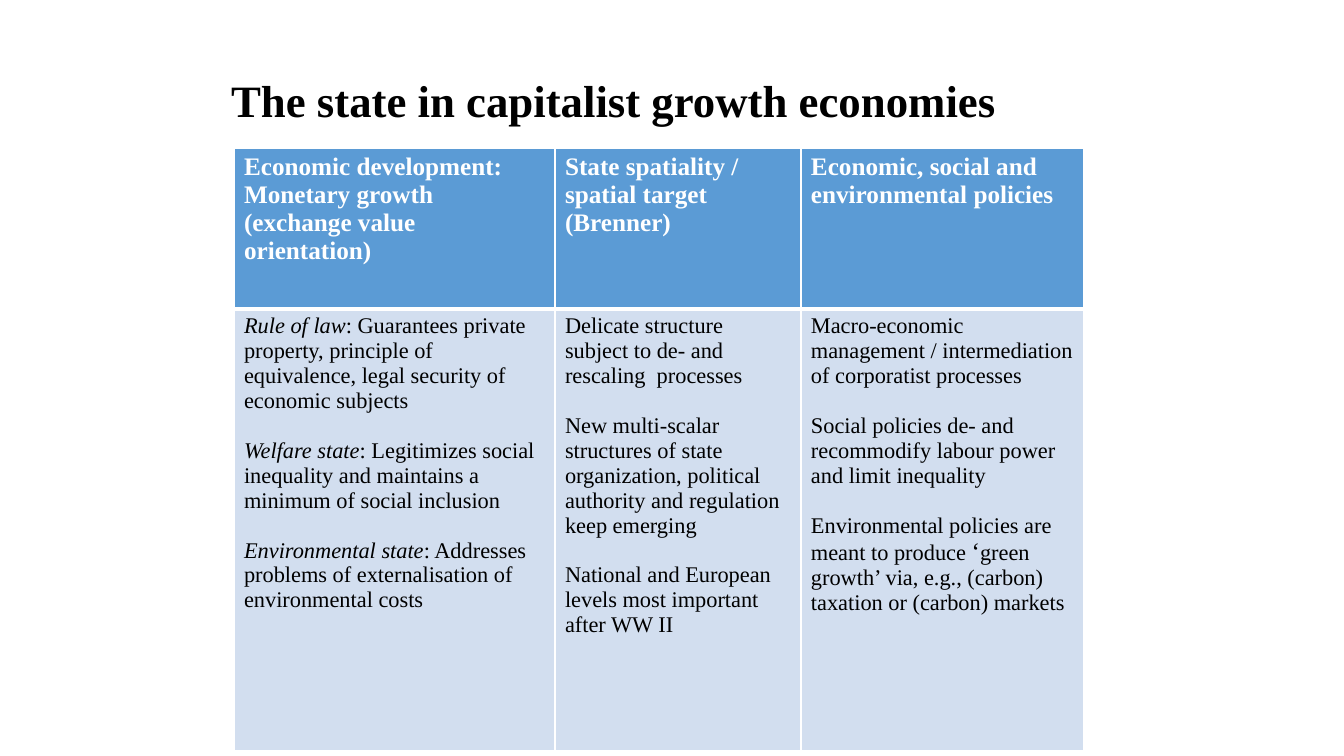
import pptx
import pptx.dml.color
import pptx.enum.text
import pptx.oxml
import pptx.oxml.ns
import pptx.util

PX = 914400 / 100.8
PAGE_SIZE = (1344, 756)
TITLE = "The state in capitalist growth economies"
TITLE_BOX = (221, 30, 1159, 146)
TABLE_AT = (234, 148)
COLUMN_WIDTHS = (321, 246, 283)
ROW_HEIGHTS = (161, 442)
FONT = "Times New Roman"
PARAGRAPH_GAP = 17.8

TITLE_FORMAT = {"size": 32, "bold": True, "italic": False, "color": "000000"}
HEADER_FORMAT = {"size": 18, "bold": True, "italic": False, "color": "FFFFFF"}
BODY_FORMAT = {"size": 16, "bold": False, "italic": False, "color": "000000"}
ITALIC = {"italic": True}
LARGE = {"size": 18}

HEADERS = [
    "Economic development: Monetary growth (exchange value orientation)",
    "State spatiality / spatial target (Brenner)",
    "Economic, social and environmental policies",
]
STATE_ROLES = [
    [("Rule of law", ITALIC),
     (": Guarantees private property, principle of equivalence, "
      "legal security of economic subjects", {})],
    [("Welfare state", ITALIC),
     (": Legitimizes social inequality and maintains a minimum of social inclusion", {})],
    [("Environmental state", ITALIC),
     (": Addresses problems of externalisation of environmental costs", {})],
]
SPATIALITY = [
    [("Delicate structure subject to de- and rescaling  processes", {})],
    [("New multi-scalar structures of state organization, "
      "political authority and regulation keep emerging", {})],
    [("National and European levels most important after WW II", {})],
]
POLICIES = [
    [("Macro-economic management / intermediation of corporatist processes", {})],
    [("Social policies de- and recommodify labour power and limit inequality", {})],
    [("Environmental policies are meant to produce ", {}),
     ("‘", LARGE),
     ("green growth’ via, e.g., (carbon) taxation or (carbon) markets", {})],
]
ROWS = [
    {"cells": [[[(header, {})]] for header in HEADERS], "format": HEADER_FORMAT,
     "fill": "5B9BD5", "borders": {"lnL": 1, "lnR": 1, "lnT": 1, "lnB": 3}},
    {"cells": [STATE_ROLES, SPATIALITY, POLICIES], "format": BODY_FORMAT,
     "fill": "D2DEEF", "borders": {"lnL": 1, "lnR": 1, "lnT": 3, "lnB": 1}},
]


def px(length):
    return pptx.util.Emu(round(length * PX))


def colour(value):
    return pptx.dml.color.RGBColor.from_string(value)


def add_span(para, text, style):
    span = para.add_run()
    span.text = text
    span.font.color.rgb = colour(style["color"])
    values = {"name": FONT, "size": pptx.util.Pt(style["size"]),
              "bold": style["bold"], "italic": style["italic"]}
    for name, value in values.items():
        setattr(span.font, name, value)


def fill_cell(cell, paragraphs, row):
    cell.fill.solid()
    cell.fill.fore_color.rgb = colour(row["fill"])
    frame = cell.text_frame
    for index, spans in enumerate(paragraphs):
        para = frame.add_paragraph() if index else frame.paragraphs[0]
        para.space_before = pptx.util.Pt(PARAGRAPH_GAP if index else 0)
        for text, changes in spans:
            add_span(para, text, {**row["format"], **changes})
    properties = cell._tc.get_or_add_tcPr()
    for index, (tag, width) in enumerate(row["borders"].items()):
        properties.insert(index, pptx.oxml.parse_xml(
            f'<a:{tag} {pptx.oxml.ns.nsdecls("a")} w="{pptx.util.Pt(width)}">'
            f'<a:solidFill><a:srgbClr val="FFFFFF"/></a:solidFill></a:{tag}>'))


def add_title(page):
    title = page.shapes.title
    for name, length in zip(("left", "top", "width", "height"), TITLE_BOX):
        setattr(title, name, px(length))
    frame = title.text_frame
    frame.word_wrap = True
    frame.vertical_anchor = pptx.enum.text.MSO_ANCHOR.MIDDLE
    para = frame.paragraphs[0]
    para.alignment = pptx.enum.text.PP_ALIGN.LEFT
    para.line_spacing = 0.9
    add_span(para, TITLE, TITLE_FORMAT)


def add_policy_table(page):
    size = (sum(COLUMN_WIDTHS), sum(ROW_HEIGHTS))
    table = page.shapes.add_table(
        len(ROWS), len(HEADERS), *map(px, TABLE_AT + size)).table
    for column, width in zip(table.columns, COLUMN_WIDTHS):
        column.width = px(width)
    for index, (row, height) in enumerate(zip(ROWS, ROW_HEIGHTS)):
        table.rows[index].height = px(height)
        for cell, paragraphs in zip(table.rows[index].cells, row["cells"]):
            fill_cell(cell, paragraphs, row)


def main():
    deck = pptx.Presentation()
    deck.slide_width, deck.slide_height = map(px, PAGE_SIZE)
    page = deck.slides.add_slide(deck.slide_layouts[5])
    add_title(page)
    add_policy_table(page)
    deck.save("out.pptx")


if __name__ == "__main__":
    main()
